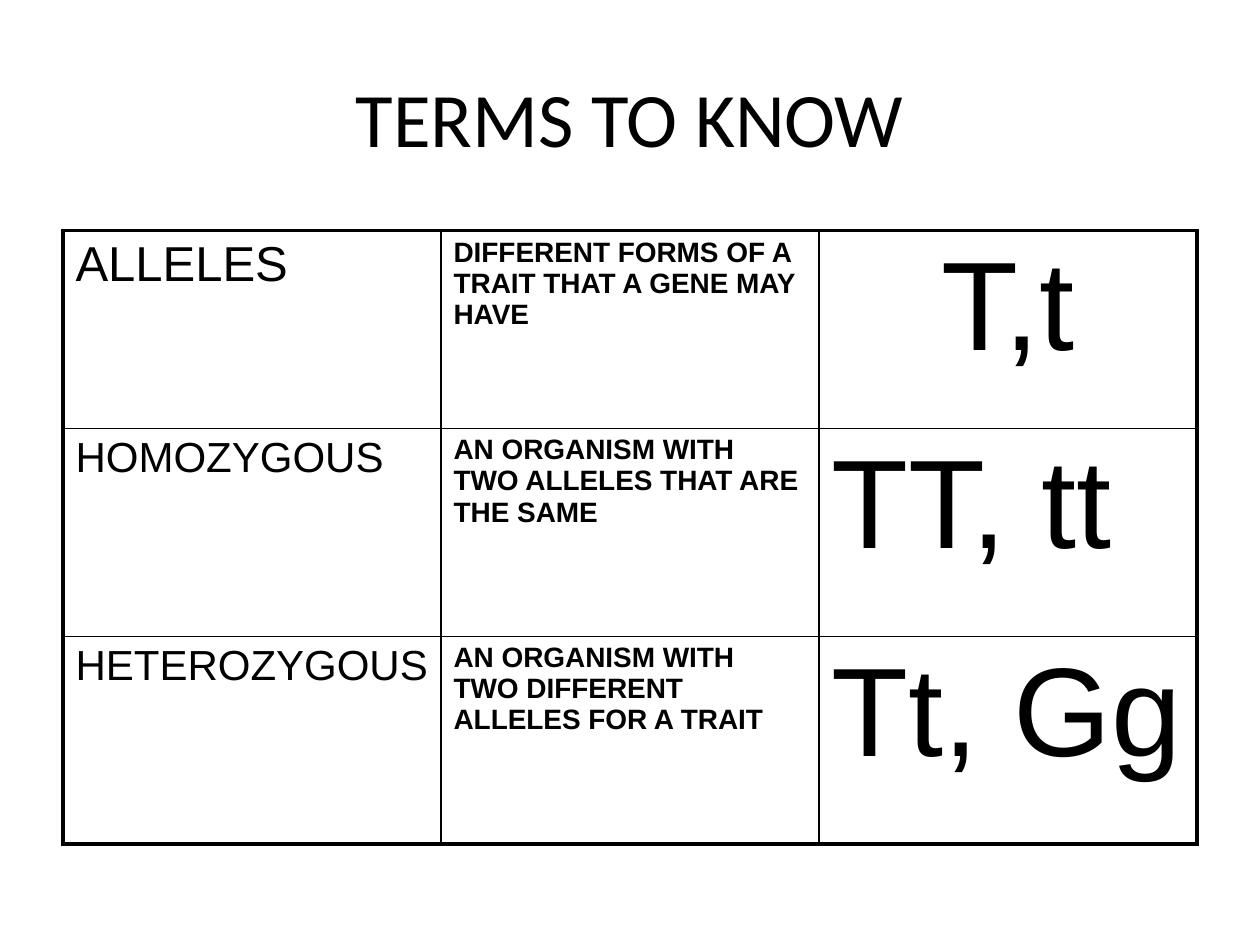
from dataclasses import dataclass

from lxml.etree import SubElement
from pptx import Presentation
from pptx.dml.color import RGBColor
from pptx.enum.text import MSO_ANCHOR, PP_ALIGN
from pptx.oxml import parse_xml
from pptx.oxml.ns import nsdecls, qn
from pptx.slide import Slide
from pptx.table import _Cell
from pptx.text.text import _Paragraph
from pptx.util import Inches, Pt


@dataclass(frozen=True)
class Theme:
    """Fonts, colours, type sizes and line widths of the slide."""
    ink: str = "000000"
    title_font: str = "Calibri"
    table_font: str = "Arial"
    title_size: float = 44
    large_term_size: float = 28
    term_size: float = 24
    definition_size: float = 16
    example_size: float = 72
    outer_line: float = 2.25
    inner_line: float = 1


@dataclass(frozen=True)
class Term:
    """One table row: a term, its definition and its example."""
    name: str
    definition: str
    example: str
    height: float
    name_size: float
    example_alignment: PP_ALIGN = PP_ALIGN.LEFT


THEME = Theme()
COLUMN_WIDTH = 3
TERMS = [
    Term("ALLELES", "DIFFERENT FORMS OF A TRAIT THAT A GENE MAY HAVE", "T,t",
         1.57, THEME.large_term_size, PP_ALIGN.CENTER),
    Term("HOMOZYGOUS", "AN ORGANISM WITH TWO ALLELES THAT ARE THE SAME", "TT, tt",
         1.65, THEME.term_size),
    Term("HETEROZYGOUS", "AN ORGANISM WITH TWO DIFFERENT ALLELES FOR A TRAIT", "Tt, Gg",
         1.65, THEME.term_size),
]


def write(paragraph: _Paragraph, text: str, font_name: str, size: float,
          alignment: PP_ALIGN, bold: bool = False) -> None:
    """Set a paragraph's text and format its run."""
    paragraph.text = text
    paragraph.alignment = alignment
    font = paragraph.runs[0].font
    font.name, font.size, font.bold = font_name, Pt(size), bold
    font.color.rgb = RGBColor.from_string(THEME.ink)


def set_borders(cell: _Cell, outer_sides: dict[str, bool]) -> None:
    """Draw the four cell borders, heavier on the table's outer sides."""
    properties = cell._tc.get_or_add_tcPr()
    for position, (side, is_outer) in enumerate(outer_sides.items()):
        width = Pt(THEME.outer_line if is_outer else THEME.inner_line)
        properties.insert(position, parse_xml(
            f'<a:ln{side} {nsdecls("a")} w="{width}"><a:solidFill>'
            f'<a:srgbClr val="{THEME.ink}"/></a:solidFill></a:ln{side}>'))


def fill_cell(cell: _Cell, text: str, size: float, alignment: PP_ALIGN, bold: bool) -> None:
    """Write a cell without fill and with proportional space before its text."""
    cell.fill.background()
    paragraph = cell.text_frame.paragraphs[0]
    write(paragraph, text, THEME.table_font, size, alignment, bold)
    space_before = SubElement(paragraph._p.get_or_add_pPr(), qn("a:spcBef"))
    SubElement(space_before, qn("a:spcPct"), val="20000")


def add_title(slide: Slide, text: str) -> None:
    """Place and format the title."""
    title = slide.shapes.title
    title.left, title.top = Inches(0.5), Inches(0.3)
    title.width, title.height = Inches(9), Inches(1.25)
    title.text_frame.vertical_anchor = MSO_ANCHOR.MIDDLE
    write(title.text_frame.paragraphs[0], text, THEME.title_font,
          THEME.title_size, PP_ALIGN.CENTER)


def add_terms(slide: Slide, terms: list[Term]) -> None:
    """Add the table of terms."""
    column_count = 3
    table = slide.shapes.add_table(
        len(terms), column_count, Inches(0.5), Inches(1.83),
        Inches(COLUMN_WIDTH * column_count),
        Inches(sum(term.height for term in terms))).table
    table.first_row = table.horz_banding = False
    for row, term in enumerate(terms):
        table.rows[row].height = Inches(term.height)
        contents = [
            (term.name, term.name_size, PP_ALIGN.LEFT, False),
            (term.definition, THEME.definition_size, PP_ALIGN.LEFT, True),
            (term.example, THEME.example_size, term.example_alignment, False),
        ]
        for column, content in enumerate(contents):
            cell = table.cell(row, column)
            fill_cell(cell, *content)
            set_borders(cell, {"L": column == 0, "R": column == column_count - 1,
                               "T": row == 0, "B": row == len(terms) - 1})


def main() -> None:
    """Build and save the presentation."""
    presentation = Presentation()
    presentation.slide_width, presentation.slide_height = Inches(10), Inches(7.5)
    slide = presentation.slides.add_slide(presentation.slide_layouts.get_by_name("Title Only"))
    add_title(slide, "TERMS TO KNOW")
    add_terms(slide, TERMS)
    presentation.save("out.pptx")


if __name__ == "__main__":
    main()
